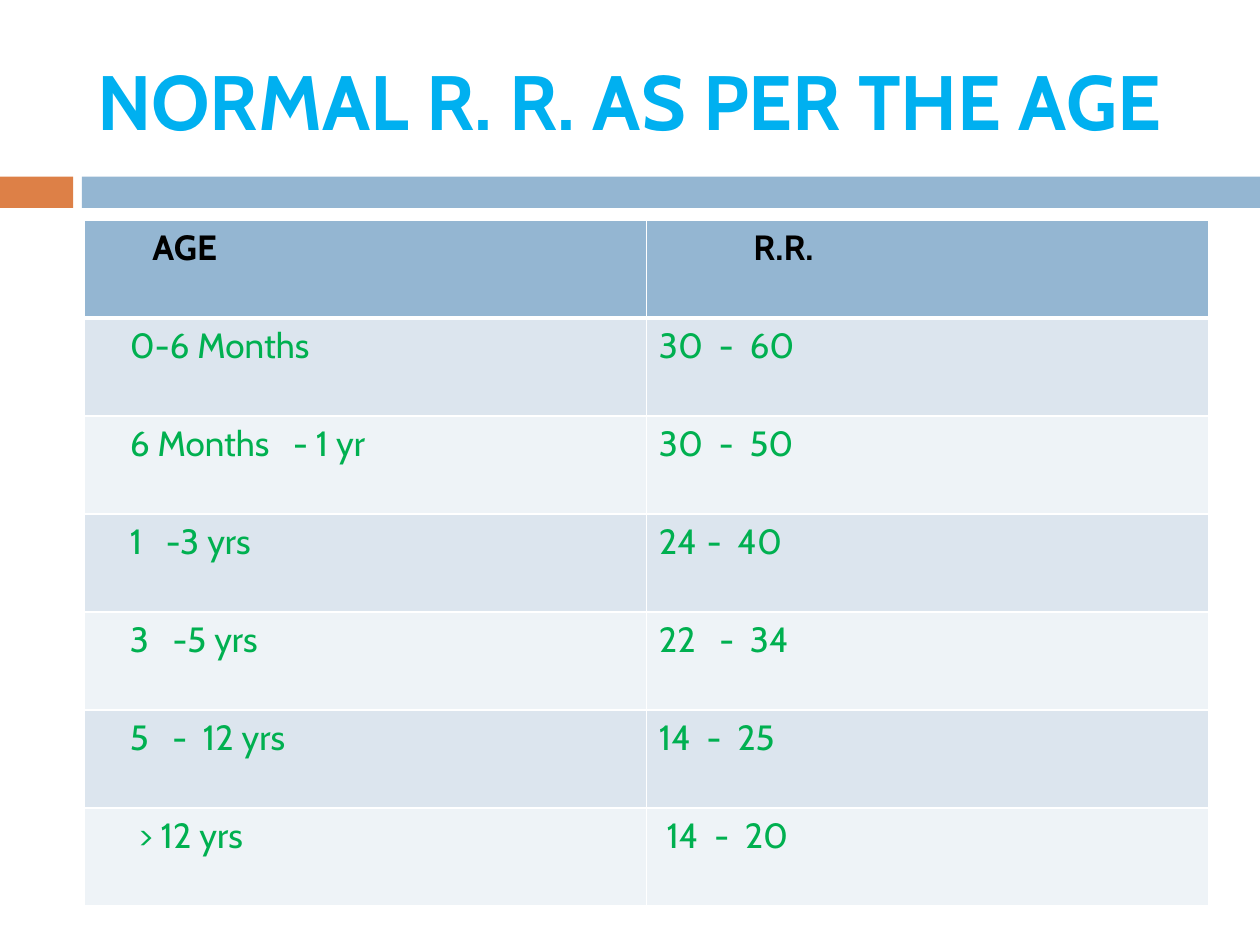
from lxml import etree
from pptx import Presentation
from pptx.dml.color import RGBColor
from pptx.enum.shapes import MSO_SHAPE
from pptx.enum.text import MSO_ANCHOR, PP_ALIGN
from pptx.oxml.ns import qn
from pptx.util import Inches, Pt

RECT = MSO_SHAPE.RECTANGLE
MIDDLE = MSO_ANCHOR.MIDDLE
LEFT = PP_ALIGN.LEFT

ORANGE = RGBColor(0xDD, 0x80, 0x47)
BLUE = RGBColor(0x94, 0xB6, 0xD2)
SKY = RGBColor(0x00, 0xB0, 0xF0)
GREEN = RGBColor(0x00, 0xB0, 0x50)
BLACK = RGBColor(0, 0, 0)
WHITE = RGBColor(0xFF, 0xFF, 0xFF)
BANDS = RGBColor(0xDC, 0xE5, 0xEE), RGBColor(0xEE, 0xF3, 0xF7)

WIDE, HIGH = Inches(10), Inches(7.5)
EDGE, SPAN = 0.067, 0.892
INSET, STEP = 0.1, 0.38

TITLE = {"name": "Cabin", "size": Pt(44), "bold": True}
HEAD = {"name": "Cabin", "size": Pt(20), "bold": True}
BODY = {"name": "Cabin", "size": Pt(20), "bold": False}

ROWS = [
    ("AGE", "R.R."),
    ("0-6 Months", "30  -  60"),
    ("6 Months   - 1 yr", "30  -  50"),
    ("1   -3 yrs", "-  40"),
    ("3   -5 yrs", "22   -  34"),
    ("5   -  12 yrs", "14  -  25"),
    ("> 12 yrs", "14  -  20"),
]
HEAD_PADS = 0.54, 0.85
BODY_PADS = 0.36, INSET
LAST_PADS = 0.43, 0.16
COUNTS = {(3, 1): 24}


def share(box):
    """Turn shares of the slide into lengths."""
    x, y, w, h = box
    return int(x * WIDE), int(y * HIGH), int(w * WIDE), int(h * HIGH)


def style(font, form, color):
    """Apply format values and a colour to a font."""
    for key, value in form.items():
        setattr(font, key, value)
    font.color.rgb = color


def add_title(slide, box, text):
    """Place and format the title."""
    title = slide.shapes.title
    title.left, title.top, title.width, title.height = share(box)
    frame = title.text_frame
    frame.text = text
    frame.vertical_anchor = MIDDLE
    par = frame.paragraphs[0]
    par.alignment = LEFT
    style(par.runs[0].font, TITLE, SKY)


def add_band(slide, box, split, gap):
    """Draw the two-part band across the box."""
    x, y, w, h = box
    start = split + gap
    parts = (x, split, ORANGE), (x + start, w - start, BLUE)
    for left, width, color in parts:
        bar = slide.shapes.add_shape(RECT, *share((left, y, width, h)))
        bar.shadow.inherit = False
        bar.fill.solid()
        bar.fill.fore_color.rgb = color
        bar.line.fill.background()


def add_edges(cell, base):
    """Draw white borders on a cell."""
    props = cell._tc.get_or_add_tcPr()
    sides = {"L": 1, "R": 1, "T": 1, "B": base}
    for spot, (side, size) in enumerate(sides.items()):
        line = etree.Element(qn(f"a:ln{side}"), w=str(Pt(size)))
        fill = etree.SubElement(line, qn("a:solidFill"))
        etree.SubElement(fill, qn("a:srgbClr"), val=str(WHITE))
        props.insert(spot, line)


def add_count(par, start):
    """Number a paragraph from the given start."""
    props = par._p.get_or_add_pPr()
    props.set("marL", str(Inches(STEP)))
    props.set("indent", str(-Inches(STEP)))
    etree.SubElement(props, qn("a:buFont"), typeface="+mj-lt")
    etree.SubElement(props, qn("a:buAutoNum"), type="arabicPlain",
                     startAt=str(start))


def fill_cell(cell, text, pad, row, start):
    """Write and format one cell."""
    head = row == 0
    cell.text = text
    cell.margin_left = Inches(pad)
    cell.fill.solid()
    cell.fill.fore_color.rgb = BLUE if head else BANDS[(row - 1) % 2]
    par = cell.text_frame.paragraphs[0]
    style(par.runs[0].font, HEAD if head else BODY, BLACK if head else GREEN)
    add_edges(cell, 3 if head else 1)
    if start:
        add_count(par, start)


def add_rates(slide, box):
    """Build the table of rates by age."""
    table = slide.shapes.add_table(len(ROWS), len(ROWS[0]), *share(box)).table
    for line in table.rows:
        line.height = int(box[3] * HIGH / len(ROWS))
    pads = [HEAD_PADS] + [BODY_PADS] * (len(ROWS) - 2) + [LAST_PADS]
    for row, texts in enumerate(ROWS):
        for col, text in enumerate(texts):
            fill_cell(table.cell(row, col), text, pads[row][col], row,
                      COUNTS.get((row, col)))


def main():
    """Build and save the slide."""
    deck = Presentation()
    deck.slide_width, deck.slide_height = WIDE, HIGH
    slide = deck.slides.add_slide(deck.slide_layouts[5])
    add_band(slide, (0, 0.187, 1, 0.033), 0.058, 0.007)
    add_title(slide, (EDGE, 0.033, SPAN, 0.144), "NORMAL R. R. AS PER THE AGE")
    add_rates(slide, (EDGE, 0.233, SPAN, 0.726))
    deck.save("out.pptx")


if __name__ == "__main__":
    main()
